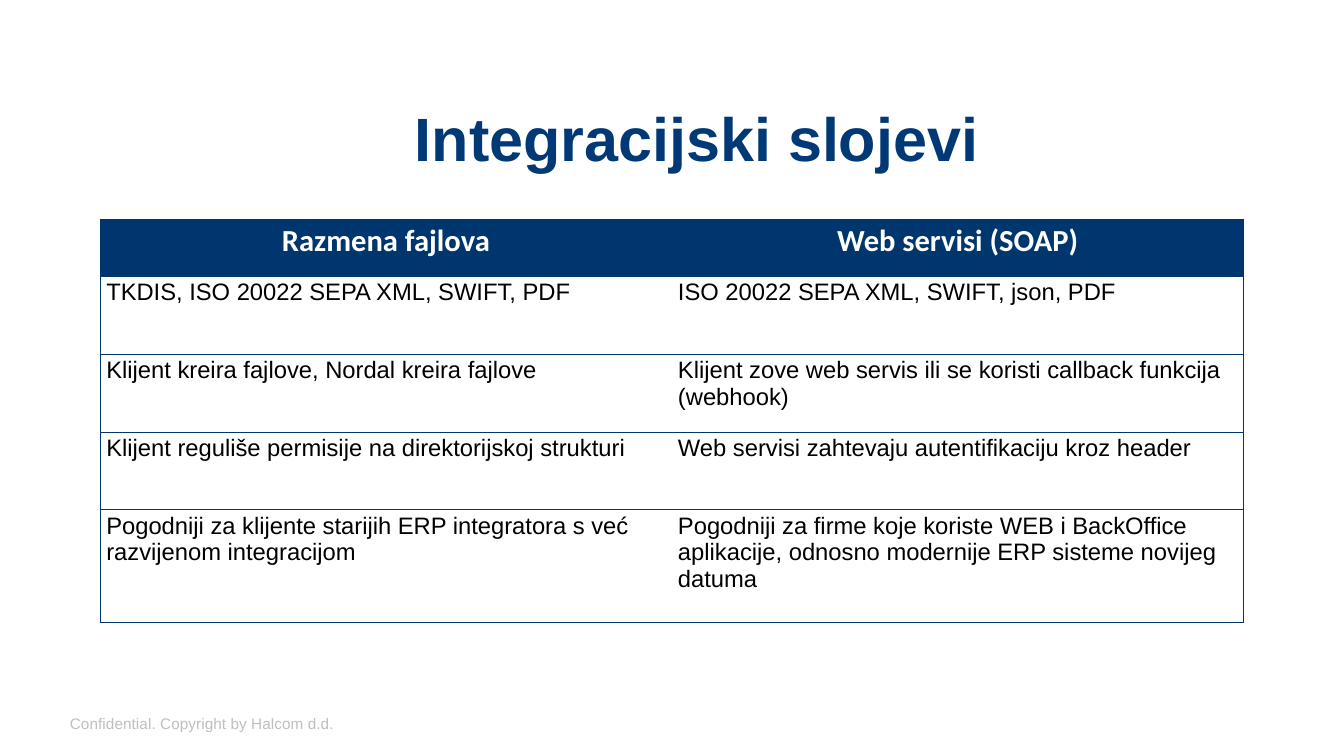
from lxml.etree import SubElement
from pptx import Presentation
from pptx.dml.color import RGBColor
from pptx.enum.text import MSO_ANCHOR, PP_ALIGN as Align
from pptx.oxml.ns import qn
from pptx.util import Pt

TITLE = "Integracijski slojevi"
FOOTER = "Confidential. Copyright by Halcom d.d."
ROWS = [
    ("Razmena fajlova", "Web servisi (SOAP)"),
    ("TKDIS, ISO 20022 SEPA XML, SWIFT, PDF",
     "ISO 20022 SEPA XML, SWIFT, json, PDF"),
    ("Klijent kreira fajlove, Nordal kreira fajlove",
     "Klijent zove web servis ili se koristi callback funkcija (webhook)"),
    ("Klijent reguliše permisije na direktorijskoj strukturi",
     "Web servisi zahtevaju autentifikaciju kroz header"),
    ("Pogodniji za klijente starijih ERP integratora s već razvijenom integracijom",
     "Pogodniji za firme koje koriste WEB i BackOffice aplikacije, "
     "odnosno modernije ERP sisteme novijeg datuma"),
]
ROW_HEIGHTS = [67.7, 91.6, 91.6, 91.6, 133.2]
COLUMN_WIDTH = 673.5

TITLE_BLUE = RGBColor(0x00, 0x39, 0x76)
TABLE_BLUE = RGBColor(0x00, 0x36, 0x6E)
WHITE = RGBColor(0xFF, 0xFF, 0xFF)
BLACK = RGBColor(0x00, 0x00, 0x00)
GREY = RGBColor(0xBF, 0xBF, 0xBF)


def write(frame, text, size, color, font="Arial", bold=False, align=Align.LEFT):
    frame.word_wrap = True
    para = frame.paragraphs[0]
    para.alignment = align
    span = para.add_run()
    span.text = text
    span.font.name = font
    span.font.size = Pt(size)
    span.font.bold = bold
    span.font.color.rgb = color
    return para


def add_text(page, left, top, width, height, text, **style):
    box = page.shapes.add_textbox(Pt(left), Pt(top), Pt(width), Pt(height))
    return box.text_frame, write(box.text_frame, text, **style)


def draw_borders(cell, sides):
    """Line the named sides of the cell and clear the others."""
    properties = cell._tc.get_or_add_tcPr()
    for side in "LRTB":
        line = SubElement(properties, qn(f"a:ln{side}"), w=str(Pt(0.75)))
        if side in sides:
            fill = SubElement(line, qn("a:solidFill"))
            SubElement(fill, qn("a:srgbClr"), val=str(TABLE_BLUE))
        else:
            SubElement(line, qn("a:noFill"))


def add_layer_table(page):
    frame = page.shapes.add_table(len(ROWS), 2, Pt(118), Pt(257.8),
                                  Pt(2 * COLUMN_WIDTH), Pt(sum(ROW_HEIGHTS)))
    table = frame.table
    table.horz_banding = False
    for column in table.columns:
        column.width = Pt(COLUMN_WIDTH)
    for r, (texts, height) in enumerate(zip(ROWS, ROW_HEIGHTS)):
        table.rows[r].height = Pt(height)
        for c, text in enumerate(texts):
            cell = table.cell(r, c)
            draw_borders(cell, "TB" + "LR"[c])
            cell.fill.solid()
            cell.vertical_anchor = MSO_ANCHOR.TOP
            if r == 0:
                cell.fill.fore_color.rgb = TABLE_BLUE
                write(cell.text_frame, text, size=36, color=WHITE,
                      font="Calibri", bold=True, align=Align.CENTER)
            else:
                cell.fill.fore_color.rgb = WHITE
                write(cell.text_frame, text, size=28, color=BLACK)


def add_footer(page):
    frame, para = add_text(page, 81.4, 839.5, 445.7, 21.6, FOOTER,
                           size=18, color=GREY)
    frame.margin_left = frame.margin_right = Pt(0.9)
    frame.margin_top = frame.margin_bottom = 0
    para.line_spacing = Pt(23.4)
    para.runs[0].font._element.set("spc", "10")


def main():
    deck = Presentation()
    deck.slide_width, deck.slide_height = Pt(1583.3), Pt(890.6)
    page = deck.slides.add_slide(deck.slide_layouts[6])
    add_footer(page)
    add_text(page, 131.8, 115.2, 1378, 90, TITLE,
             size=72, color=TITLE_BLUE, bold=True, align=Align.CENTER)
    add_layer_table(page)
    deck.save("out.pptx")


if __name__ == "__main__":
    main()
